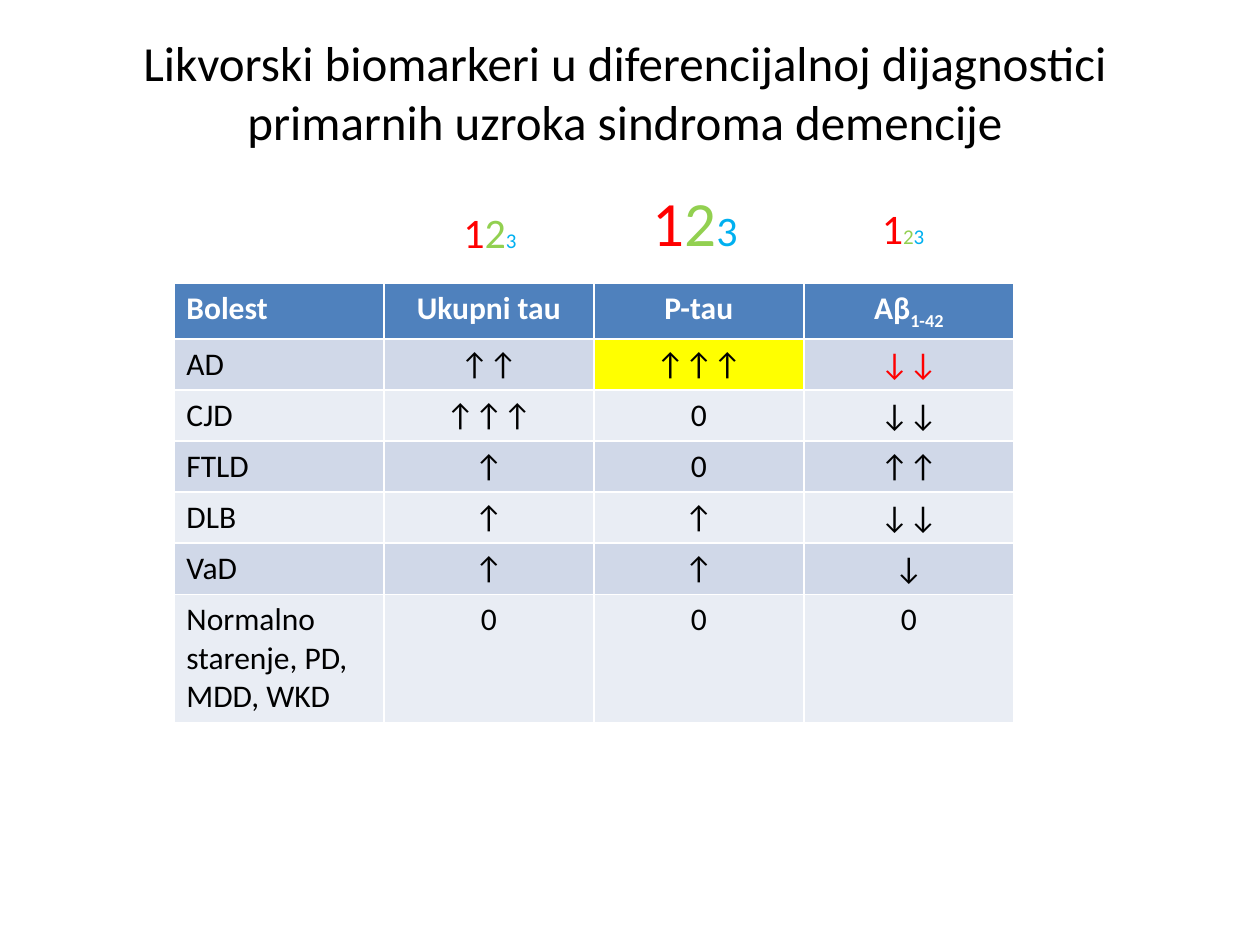
from pptx import Presentation
from pptx.dml.color import RGBColor
from pptx.enum.text import MSO_AUTO_SIZE as AutoSize, PP_ALIGN as Align
from pptx.util import Pt

FONT = "Calibri"
BLACK, WHITE, RED, GREEN, BLUE = "000000", "FFFFFF", "FF0000", "92D050", "00B0F0"
HEADER, BANDS, HIGHLIGHT = "4F81BD", ("D0D8E8", "E9EDF4"), "FFFF00"

TITLE = "Likvorski biomarkeri u diferencijalnoj dijagnostici primarnih uzroka sindroma demencije"
ROWS = [
    ("Bolest", "Ukupni tau", "P-tau", "Aβ"),
    ("AD", "↑↑", "↑↑↑", "↓↓"),
    ("CJD", "↑↑↑", "0", "↓↓"),
    ("FTLD", "↑", "0", "↑↑"),
    ("DLB", "↑", "↑", "↓↓"),
    ("VaD", "↑", "↑", "↓"),
    ("Normalno starenje, PD, MDD, WKD", "0", "0", "0"),
]
RANKINGS = [
    ((257.76, 114.48, 45.36, 36), (24, 24, 12)),
    ((365.76, 101.52, 63.36, 51.12), (36, 36, 24)),
    ((496.8, 112.32, 38.88, 36), (24, 12, 12)),
]


def color(value):
    return RGBColor.from_string(value)


def style_font(font, size, value, bold=False):
    font.name = FONT
    font.size = Pt(size)
    font.bold = bold
    font.color.rgb = color(value)


def add_text_box(slide, box, wrap):
    frame = slide.shapes.add_textbox(*map(Pt, box)).text_frame
    frame.word_wrap = wrap
    frame.auto_size = AutoSize.SHAPE_TO_FIT_TEXT
    return frame.paragraphs[0]


def add_title(slide):
    paragraph = add_text_box(slide, (30.96, 15.12, 652.32, 74.88), True)
    paragraph.text = TITLE
    paragraph.alignment = Align.CENTER
    style_font(paragraph.font, 28, BLACK)


def add_ranking(slide, box, sizes):
    paragraph = add_text_box(slide, box, False)
    for digit, size, value in zip("123", sizes, (RED, GREEN, BLUE)):
        run = paragraph.add_run()
        run.text = digit
        style_font(run.font, size, value)


def fill_cell(cell, text, fill, text_color, bold, centered):
    cell.fill.solid()
    cell.fill.fore_color.rgb = color(fill)
    paragraph = cell.text_frame.paragraphs[0]
    paragraph.text = text
    if centered:
        paragraph.alignment = Align.CENTER
    style_font(paragraph.font, 18, text_color, bold)
    style_font(paragraph.runs[0].font, 18, text_color, bold)


def add_subscript(cell, text):
    run = cell.text_frame.paragraphs[0].add_run()
    run.text = text
    style_font(run.font, 18, WHITE, True)
    run.font._element.set("baseline", "-25000")


def add_biomarker_table(slide):
    row_height, column_width = 29.2, 120
    columns = len(ROWS[0])
    table = slide.shapes.add_table(
        len(ROWS), columns, Pt(99.36), Pt(162),
        Pt(columns * column_width), Pt(len(ROWS) * row_height)).table
    for row, texts in enumerate(ROWS):
        table.rows[row].height = Pt(row_height)
        for column, text in enumerate(texts):
            is_header = row == 0
            fill = HEADER if is_header else BANDS[(row - 1) % 2]
            text_color = WHITE if is_header else BLACK
            if (row, column) == (1, 2):
                fill = HIGHLIGHT
            if (row, column) == (1, 3):
                text_color = RED
            fill_cell(table.cell(row, column), text, fill, text_color, is_header, column > 0)
    add_subscript(table.cell(0, 3), "1-42")


def main():
    presentation = Presentation()
    presentation.slide_width, presentation.slide_height = Pt(720), Pt(540)
    slide = presentation.slides.add_slide(presentation.slide_layouts[6])
    add_biomarker_table(slide)
    add_title(slide)
    for box, sizes in RANKINGS:
        add_ranking(slide, box, sizes)
    presentation.save("out.pptx")


if __name__ == "__main__":
    main()
